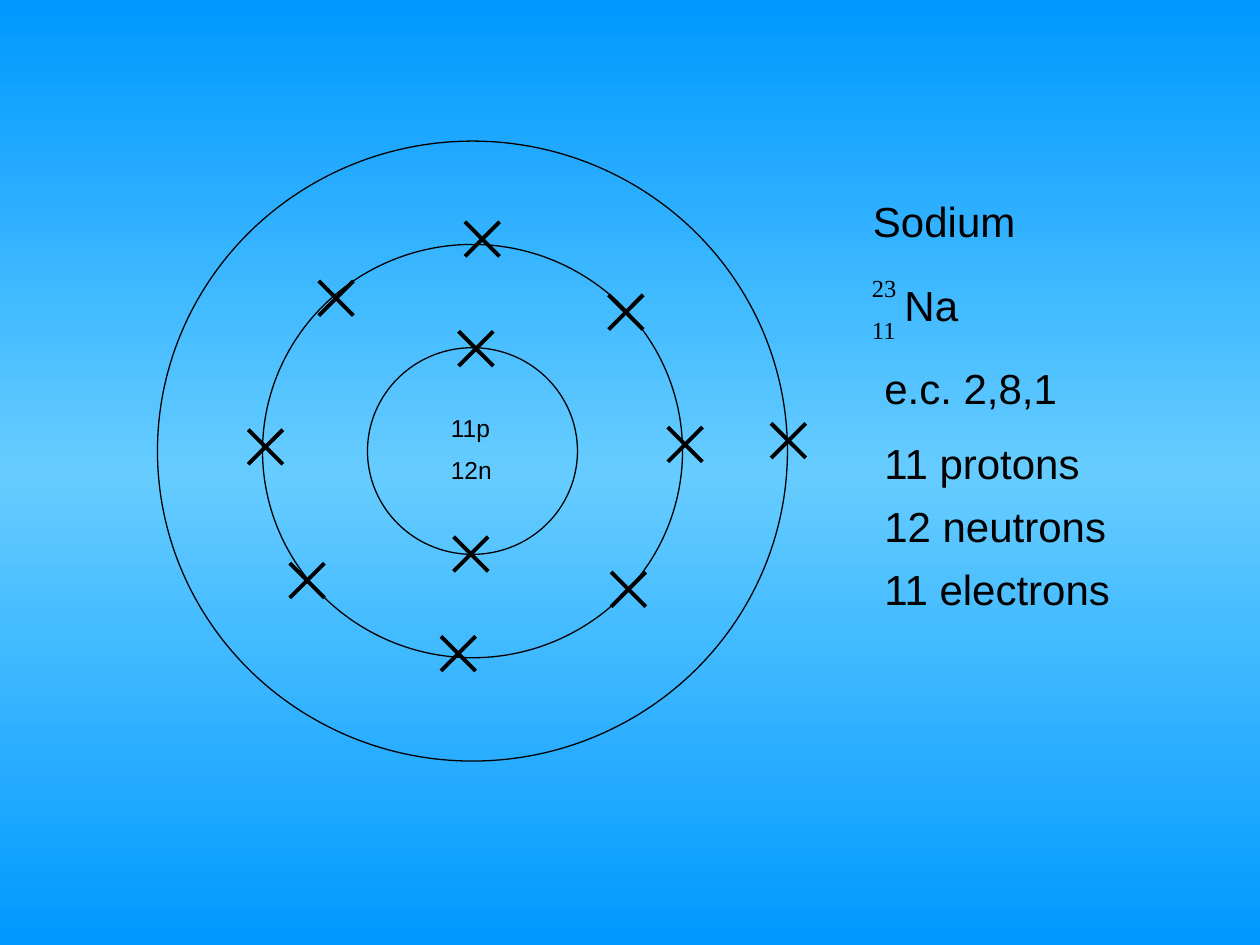
import copy

import pptx
import pptx.dml.color
import pptx.enum.shapes
import pptx.enum.text
import pptx.oxml.ns
import pptx.util
from lxml import etree

Inches = pptx.util.Inches
qn = pptx.oxml.ns.qn
BLACK = "000000"
CROSS = 0.275
ELECTRONS = [
    [(2.35, 3.14), (2.39, 1.51)],
    [(2.44, 0.64), (3.58, 1.22), (4.05, 2.27), (3.6, 3.42),
     (2.25, 3.93), (1.05, 3.35), (0.72, 2.29), (1.28, 1.11)],
    [(4.87, 2.24)],
]


def rgb(color):
    """Turn a hex string into a colour."""
    return pptx.dml.color.RGBColor.from_string(color)


def paint_background(s, edge, middle):
    """Fill the slide with a vertical gradient, lighter in the middle."""
    fill = s.background.fill
    fill.gradient()
    fill.gradient_angle = 90
    stops = next(s.element.iter(qn("a:gsLst")))
    stops.append(copy.deepcopy(stops[0]))
    for stop, position, color in zip(fill.gradient_stops, (0, 0.5, 1), (edge, middle, edge)):
        stop.position = position
        stop.color.rgb = rgb(color)


def add_text(s, box, lines, size=24, font="Arial", inset=True):
    """Place lines of text in a box, spaced by half a line."""
    sp = s.shapes.add_textbox(*map(Inches, box))
    tf = sp.text_frame
    tf.word_wrap = True
    tf.auto_size = pptx.enum.text.MSO_AUTO_SIZE.SHAPE_TO_FIT_TEXT
    if not inset:
        tf.margin_left = tf.margin_top = tf.margin_right = tf.margin_bottom = 0
    tf.text = "\n".join(lines)
    for p in tf.paragraphs:
        p.font.size = pptx.util.Pt(size)
        p.font.name = font
        p.font.color.rgb = rgb(BLACK)
        before = etree.Element(qn("a:spcBef"))
        etree.SubElement(before, qn("a:spcPct"), val="50000")
        p._p.get_or_add_pPr().insert(0, before)


def add_shell(group, left, top, width, height):
    """Draw one electron shell as an unfilled ellipse."""
    sp = group.shapes.add_shape(
        pptx.enum.shapes.MSO_SHAPE.OVAL, *map(Inches, (left, top, width, height)))
    sp.shadow.inherit = False
    sp.fill.background()
    sp.line.color.rgb = rgb(BLACK)
    sp.line.width = pptx.util.Pt(0.75)


def add_electron(group, left, top):
    """Draw one electron as a cross of two lines."""
    for y1, y2 in ((top, top + CROSS), (top + CROSS, top)):
        line = group.shapes.add_connector(
            pptx.enum.shapes.MSO_CONNECTOR.STRAIGHT,
            *map(Inches, (left, y1, left + CROSS, y2)))
        line.line.color.rgb = rgb(BLACK)
        line.line.width = pptx.util.Pt(2.25)
        etree.SubElement(line._element.spPr, qn("a:effectLst"))


def add_atom(s, left, top, width, height):
    """Draw the shells, electrons and nucleus label within a box."""
    group = s.shapes.add_group_shape()
    count = len(ELECTRONS)
    for number, electrons in enumerate(ELECTRONS, 1):
        w, h = width * number / count, height * number / count
        add_shell(group, left + (width - w) / 2, top + (height - h) / 2, w, h)
        for x, y in electrons:
            add_electron(group, left + x, top + y)
    add_text(s, (left + 2.23, top + 2.11, 0.67, 0.68), ["11p", "12n"], size=14)


def add_facts(s, left, top):
    """Write the element name, symbol, configuration and particle counts."""
    add_text(s, (left, top, 1.35, 0.5), ["Sodium"])
    add_text(s, (left + 0.25, top + 0.67, 1, 0.5), ["Na"])
    for number, y in (("23", 0.67), ("11", 1)):
        add_text(s, (left + 0.09, top + y, 0.25, 0.23), [number],
                 size=14, font="Times New Roman", inset=False)
    add_text(s, (left + 0.09, top + 1.33, 2.58, 0.5), ["e.c. 2,8,1"])
    for i, particles in enumerate(("11 protons", "12 neutrons", "11 electrons")):
        add_text(s, (left + 0.09, top + 1.92 + 0.5 * i, 2.17, 0.5), [particles])


def main():
    """Build and save the slide."""
    prs = pptx.Presentation()
    prs.slide_width, prs.slide_height = Inches(10), Inches(7.5)
    s = prs.slides.add_slide(prs.slide_layouts[6])
    paint_background(s, "0099FF", "66CCFF")
    add_facts(s, 6.83, 1.5)
    add_atom(s, 1.25, 1.12, 5, 4.92)
    prs.save("out.pptx")


if __name__ == "__main__":
    main()
